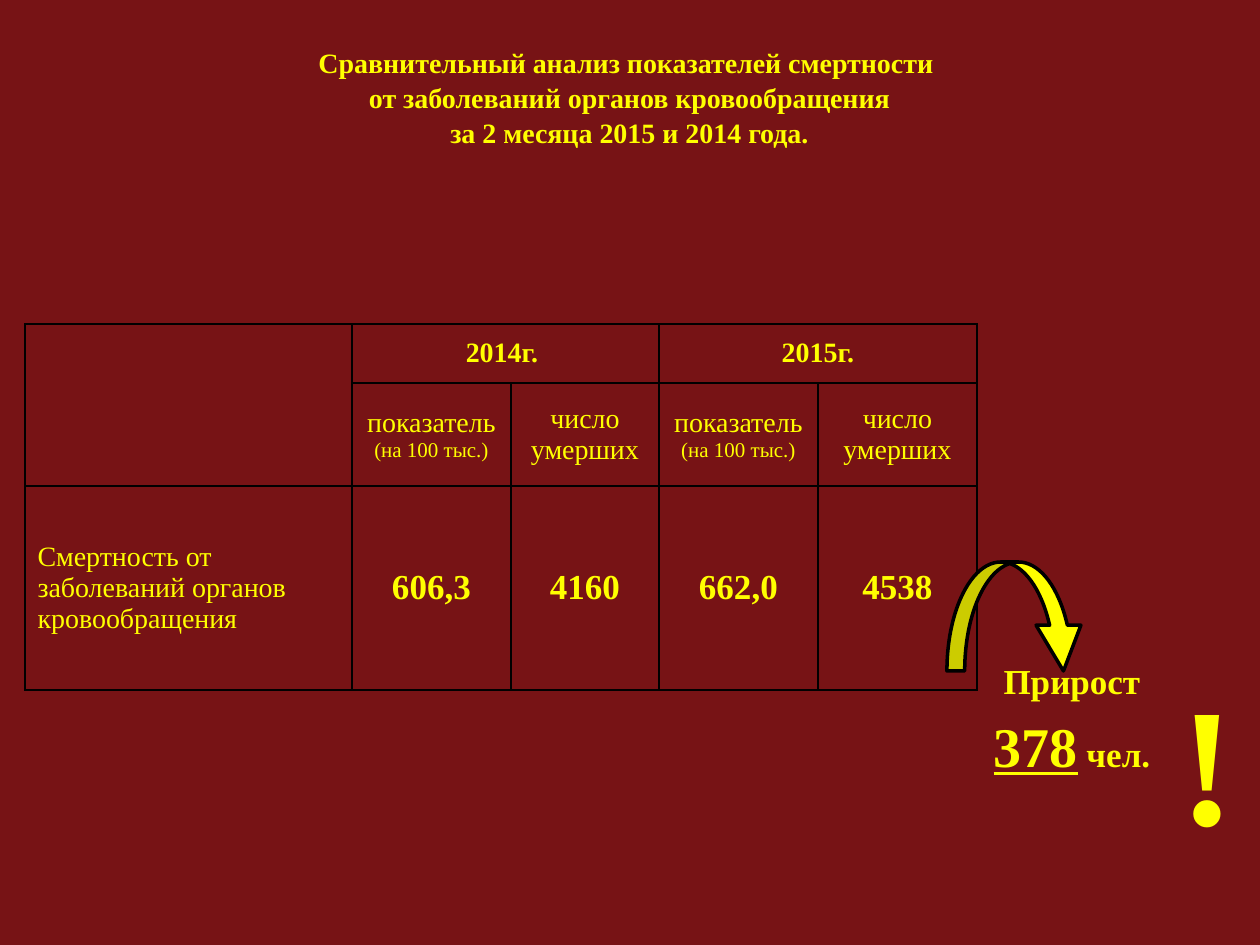
from lxml import etree
from pptx import Presentation
from pptx.dml.color import RGBColor
from pptx.enum.shapes import MSO_SHAPE
from pptx.enum.text import MSO_ANCHOR, PP_ALIGN
from pptx.oxml.ns import qn
from pptx.util import Pt

PX = 914400 / 126
FONT = "Times New Roman"
COLORS = {"back": "771315", "text": "FFFF00", "line": "000000", "glow": "FF0000"}
LEFT, CENTER = PP_ALIGN.LEFT, PP_ALIGN.CENTER
TOP, MIDDLE = MSO_ANCHOR.TOP, MSO_ANCHOR.MIDDLE
ARROW = MSO_SHAPE.CURVED_DOWN_ARROW

COL_WIDTHS = [327, 159, 148, 159, 159]
ROW_HEIGHTS = [59, 103, 204]
YEARS = ["2014г. ", "2015г."]
VALUES = ["606,3", "4160", "662,0", "4538"]


def px(n):
    return round(n * PX)


def rgb(name):
    return RGBColor.from_string(COLORS[name])


def make_line(tag, color, width):
    ln = etree.Element(qn(tag), w=str(Pt(width)))
    fill = etree.SubElement(ln, qn("a:solidFill"))
    etree.SubElement(fill, qn("a:srgbClr"), val=COLORS[color])
    return ln


def write(p, text, size=16, bold=False, underline=False, align=CENTER,
          before=0, spacing=None):
    p.alignment = align
    p.space_before = Pt(before)
    if spacing:
        p.line_spacing = spacing
    r = p.add_run()
    r.text = text
    r.font.name = FONT
    r.font.size = Pt(size)
    r.font.bold = bold
    r.font.underline = underline
    r.font.color.rgb = rgb("text")
    return r


def write_lines(tf, lines, **fmt):
    for i, line in enumerate(lines):
        p = tf.paragraphs[0] if i == 0 else tf.add_paragraph()
        write(p, line, **fmt)


def add_box(slide, x, y, w, h, anchor=TOP):
    tf = slide.shapes.add_textbox(px(x), px(y), px(w), px(h)).text_frame
    tf.word_wrap = True
    tf.vertical_anchor = anchor
    return tf


def style_cell(cell):
    cell.fill.background()
    cell.vertical_anchor = MIDDLE
    tc_pr = cell._tc.get_or_add_tcPr()
    for i, side in enumerate("LRTB"):
        tc_pr.insert(i, make_line(f"a:ln{side}", "line", 1))


def add_mortality_table(slide, x, y):
    frame = slide.shapes.add_table(
        len(ROW_HEIGHTS), len(COL_WIDTHS), px(x), px(y),
        px(sum(COL_WIDTHS)), px(sum(ROW_HEIGHTS)))
    table = frame.table
    table.first_row = table.horz_banding = False
    for col, width in zip(table.columns, COL_WIDTHS):
        col.width = px(width)
    for row, height in zip(table.rows, ROW_HEIGHTS):
        row.height = px(height)
    for cell in table.iter_cells():
        style_cell(cell)

    # Headings: each year spans a rate and a count
    table.cell(0, 0).merge(table.cell(1, 0))
    for i, year in enumerate(YEARS):
        c = 1 + 2 * i
        table.cell(0, c).merge(table.cell(0, c + 1))
        write_lines(table.cell(0, c).text_frame, [year], bold=True)
        tf = table.cell(1, c).text_frame
        write(tf.paragraphs[0], "показатель")
        write(tf.add_paragraph(), "(на 100 тыс.)", size=12)
        write_lines(table.cell(1, c + 1).text_frame, ["число умерших"])

    # Data row
    write_lines(table.cell(2, 0).text_frame,
                ["Смертность от заболеваний органов кровообращения"], align=LEFT)
    for c, value in enumerate(VALUES, 1):
        write_lines(table.cell(2, c).text_frame, [value], size=20, bold=True)


def add_arrow(slide, x, y, w, h, adjustments):
    sp = slide.shapes.add_shape(ARROW, px(x), px(y), px(w), px(h))
    sp.shadow.inherit = False
    for i, value in enumerate(adjustments):
        sp.adjustments[i] = value
    sp.fill.solid()
    sp.fill.fore_color.rgb = rgb("text")
    sp.line.color.rgb = rgb("line")
    sp.line.width = Pt(2)


def main():
    prs = Presentation()
    prs.slide_width, prs.slide_height = px(1260), px(945)
    slide = prs.slides.add_slide(prs.slide_layouts[6])
    slide.background.fill.solid()
    slide.background.fill.fore_color.rgb = rgb("back")

    # Title
    tf = add_box(slide, 34, 38, 1191, 117, anchor=MIDDLE)
    write_lines(tf, ["Сравнительный анализ показателей смертности ",
                     "от заболеваний органов кровообращения",
                     "за 2 месяца 2015 и 2014 года."], bold=True, spacing=1.04)

    # Increase in deaths
    tf = add_box(slide, 978, 653, 188, 130)
    write(tf.paragraphs[0], "Прирост", size=20, bold=True)
    p = tf.add_paragraph()
    write(p, "378", size=32, bold=True, underline=True, before=6)
    write(p, " чел.", size=20, bold=True, before=6)

    # Table and the arrow from its last value
    add_mortality_table(slide, 25, 324)
    add_arrow(slide, 947, 562, 139, 109, [0.163, 0.412, 0.42])

    # Exclamation mark
    tf = add_box(slide, 1155, 651, 105, 217)
    r = write(tf.paragraphs[0], "!", size=96, bold=True)
    r.font._element.insert(0, make_line("a:ln", "glow", 0.9))

    prs.save("out.pptx")


if __name__ == "__main__":
    main()
